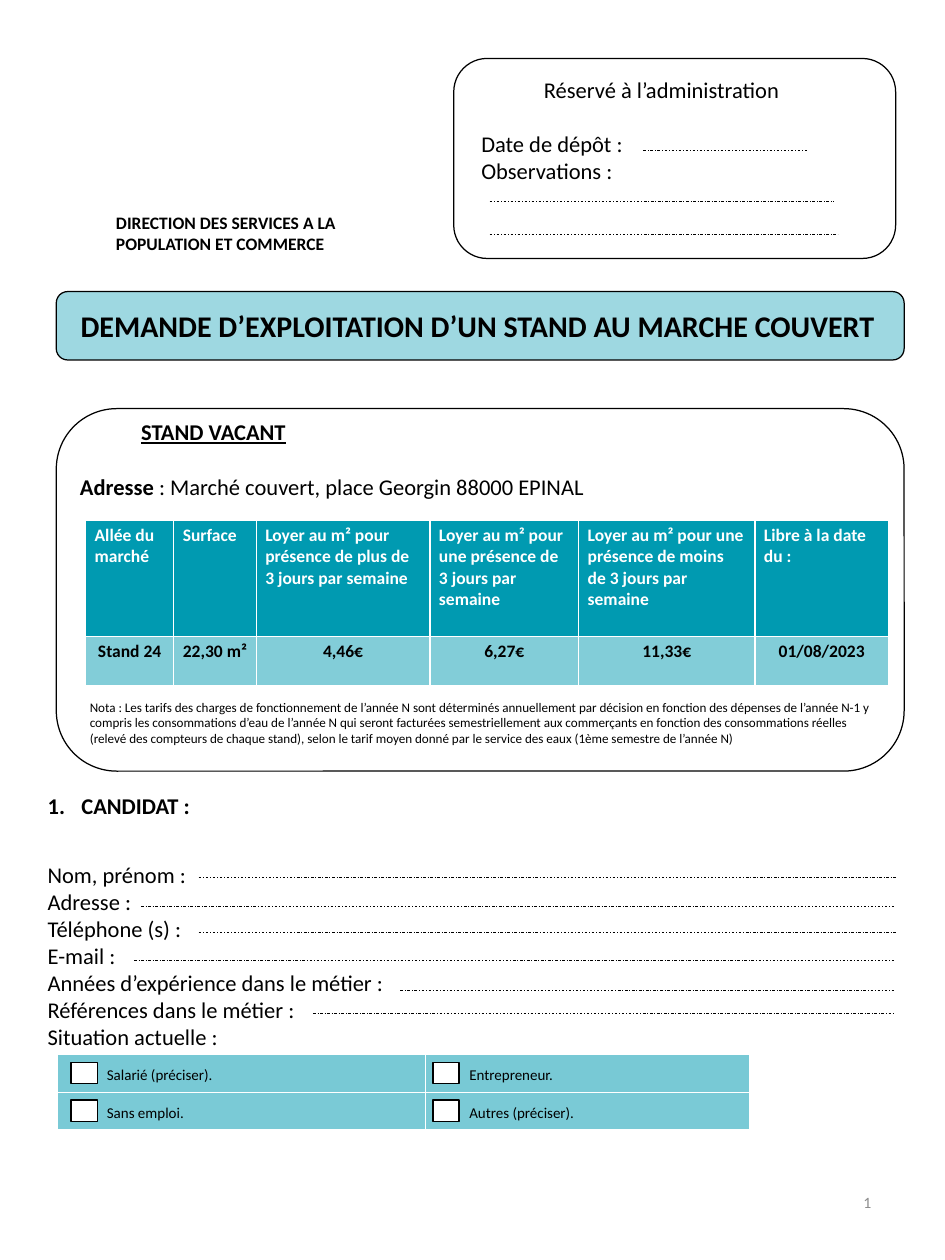
import pptx
import pptx.dml.color
import pptx.enum.dml
import pptx.enum.shapes
import pptx.enum.text
import pptx.oxml
import pptx.oxml.ns
import pptx.util

Pt = pptx.util.Pt
RGB = pptx.dml.color.RGBColor.from_string
SHAPE = pptx.enum.shapes.MSO_SHAPE
ALIGN = pptx.enum.text.PP_ALIGN
ANCHOR = pptx.enum.text.MSO_ANCHOR
NS = pptx.oxml.ns.nsdecls("a")
C = {"ink": "000000", "paper": "FFFFFF", "teal": "009AB1", "grey": "8C8C8C"}


def add_run(p, text, size=18, bold=False, color="ink"):
    r = p.add_run()
    r.text = text
    r.font.name = "Calibri"
    r.font.size = Pt(size)
    r.font.bold = bold
    r.font.color.rgb = RGB(C[color])
    return r


def set_fill(fill, color, opacity=100):
    """Solid fill, with opacity in percent."""
    fill.solid()
    fill.fore_color.rgb = RGB(C[color])
    if opacity < 100:
        clr = fill._xPr.find(".//" + pptx.oxml.ns.qn("a:srgbClr"))
        clr.append(pptx.oxml.parse_xml(f'<a:alpha {NS} val="{opacity * 1000}"/>'))


prs = pptx.Presentation()
prs.slide_width, prs.slide_height = Pt(756), Pt(1008)
s = prs.slides.add_slide(prs.slide_layouts[5])

# Frames
frames = {}
for name, x, y, w, h, color, opacity in [
    ("admin", 363, 46.8, 353.5, 160, "paper", 100),
    ("title", 45, 233.3, 678.3, 54.7, "teal", 38),
    ("stand", 45, 326.9, 678.3, 290, "paper", 100),
]:
    sp = s.shapes.add_shape(SHAPE.ROUNDED_RECTANGLE, Pt(x), Pt(y), Pt(w), Pt(h))
    sp.shadow.inherit = False
    set_fill(sp.fill, color, opacity)
    sp.line.color.rgb = RGB(C["ink"])
    sp.line.width = Pt(1)
    frames[name] = sp

# Title, placed in front of its frame
title = s.shapes.title
title.left, title.top, title.width, title.height = Pt(57), Pt(242), Pt(650), Pt(36)
frames["title"].element.addnext(title.element)
tf = title.text_frame
tf.word_wrap = True
tf.vertical_anchor = ANCHOR.MIDDLE
p = tf.paragraphs[0]
p.alignment = ALIGN.CENTER
add_run(p, "DEMANDE D’EXPLOITATION D’UN STAND AU MARCHE COUVERT", 24, True)

# Text boxes
boxes = {}
for name, x, y, w, h in [
    ("service", 85.7, 166.3, 212.4, 41),
    ("admin", 378, 56.9, 302.4, 94.3),
    ("stand", 56.9, 331.2, 642.2, 72.7),
    ("nota", 64.8, 555.8, 642.2, 45.4),
    ("candidate", 31, 630, 673.2, 330),
    ("page number", 534.2, 934.6, 170, 54),
]:
    tf = s.shapes.add_textbox(Pt(x), Pt(y), Pt(w), Pt(h)).text_frame
    tf.word_wrap = True
    boxes[name] = tf

add_run(boxes["service"].paragraphs[0],
        "DIRECTION DES SERVICES A LA POPULATION ET COMMERCE", 14, True)

tf = boxes["admin"]
p = tf.paragraphs[0]
p.alignment = ALIGN.CENTER
add_run(p, "Réservé à l’administration")
p = tf.add_paragraph()
p.space_before = Pt(22)
add_run(p, "Date de dépôt :")
add_run(tf.add_paragraph(), "Observations :")

tf = boxes["stand"]
p = tf.paragraphs[0]
p._p.get_or_add_pPr().set("marL", str(Pt(49)))
add_run(p, "STAND VACANT", bold=True).font.underline = True
p = tf.add_paragraph()
p.space_before = Pt(22)
add_run(p, "Adresse", bold=True)
add_run(p, " : Marché couvert, place Georgin 88000 EPINAL")

add_run(
    boxes["nota"].paragraphs[0],
    "Nota : Les tarifs des charges de fonctionnement de l’année N sont déterminés "
    "annuellement par décision en fonction des dépenses de l’année N-1 y compris les "
    "consommations d’eau de l’année N qui seront facturées semestriellement aux "
    "commerçants en fonction des consommations réelles (relevé des compteurs de chaque "
    "stand), selon le tarif moyen donné par le service des eaux (1ème semestre de l’année N)",
    10.5,
)

tf = boxes["candidate"]
p = tf.paragraphs[0]
pPr = p._p.get_or_add_pPr()
pPr.set("marL", str(Pt(27)))
pPr.set("indent", str(-Pt(27)))
pPr.append(pptx.oxml.parse_xml(f'<a:buFont {NS} typeface="+mj-lt"/>'))
pPr.append(pptx.oxml.parse_xml(f'<a:buAutoNum {NS} type="arabicPeriod"/>'))
add_run(p, "CANDIDAT :", bold=True)
for i, label in enumerate([
    "Nom, prénom :", "Adresse :", "Téléphone (s) :", "E-mail :",
    "Années d’expérience dans le métier :", "Références dans le métier :",
    "Situation actuelle :",
]):
    p = tf.add_paragraph()
    if i == 0:
        p.space_before = Pt(34)
    add_run(p, label)

tf = boxes["page number"]
tf.vertical_anchor = ANCHOR.MIDDLE
p = tf.paragraphs[0]
p.alignment = ALIGN.RIGHT
add_run(p, "1", 12.6, color="grey")

# Rent table
rents = [
    ("Allée du marché", "Stand 24", 70.5),
    ("Surface", "22,30 m²", 66),
    ("Loyer au m² pour présence de plus de 3 jours par semaine", "4,46€", 139),
    ("Loyer au m² pour une présence de 3 jours par semaine", "6,27€", 119),
    ("Loyer au m² pour une présence de moins de 3 jours par semaine", "11,33€", 141),
    ("Libre à la date du :", "01/08/2023", 107),
]
table = s.shapes.add_table(2, 6, Pt(68.5), Pt(416.2), Pt(642.5), Pt(132)).table
table.horz_banding = False
table.rows[0].height, table.rows[1].height = Pt(93), Pt(39)
for col, (heading, value, width) in enumerate(rents):
    table.columns[col].width = Pt(width)
    head, body = table.cell(0, col), table.cell(1, col)
    set_fill(head.fill, "teal")
    add_run(head.text_frame.paragraphs[0], heading, 14, True, "paper")
    set_fill(body.fill, "teal", 49)
    p = body.text_frame.paragraphs[0]
    p.alignment = ALIGN.CENTER
    add_run(p, value, 14, True)

# Current situation: options with check boxes
options = [["Salarié (préciser).", "Entrepreneur."],
           ["Sans emploi.", "Autres (préciser)."]]
table = s.shapes.add_table(2, 2, Pt(46), Pt(843.8), Pt(553.5), Pt(60)).table
table.horz_banding = False
table.columns[0].width, table.columns[1].width = Pt(294.5), Pt(259)
for row, labels in enumerate(options):
    table.rows[row].height = Pt(30)
    for col, label in enumerate(labels):
        cell = table.cell(row, col)
        cell.margin_left = Pt([39.5, 35][col])
        cell.margin_top = Pt(9.3)
        set_fill(cell.fill, "teal", [53, 52][row])
        add_run(cell.text_frame.paragraphs[0], label, 12)
        sp = s.shapes.add_shape(SHAPE.RECTANGLE, Pt([56.9, 346.3][col]),
                                Pt([850, 880][row]), Pt(21), Pt(17))
        sp.shadow.inherit = False
        set_fill(sp.fill, "paper")
        sp.line.color.rgb = RGB(C["ink"])
        sp.line.width = Pt(1)

# Dotted lines to write on
for x1, x2, y in [
    (514.8, 646.6, 120.2), (391.7, 667.4, 161.3), (391.7, 670.3, 187.2),
    (159, 716.4, 702), (113, 716.4, 725), (159, 716.4, 746),
    (107.3, 716.4, 768.2), (320.4, 716.4, 792), (250.6, 716.4, 810.7),
]:
    # The two longest labels push their lines to the right
    line = s.shapes.add_connector(pptx.enum.shapes.MSO_CONNECTOR.STRAIGHT,
                                  Pt(x1), Pt(y), Pt(x2), Pt(y))
    line.line.color.rgb = RGB(C["ink"])
    line.line.width = Pt(0.5)
    line.line.dash_style = pptx.enum.dml.MSO_LINE.DASH_DOT
    line.element.spPr.append(pptx.oxml.parse_xml(f"<a:effectLst {NS}/>"))

prs.save("out.pptx")
